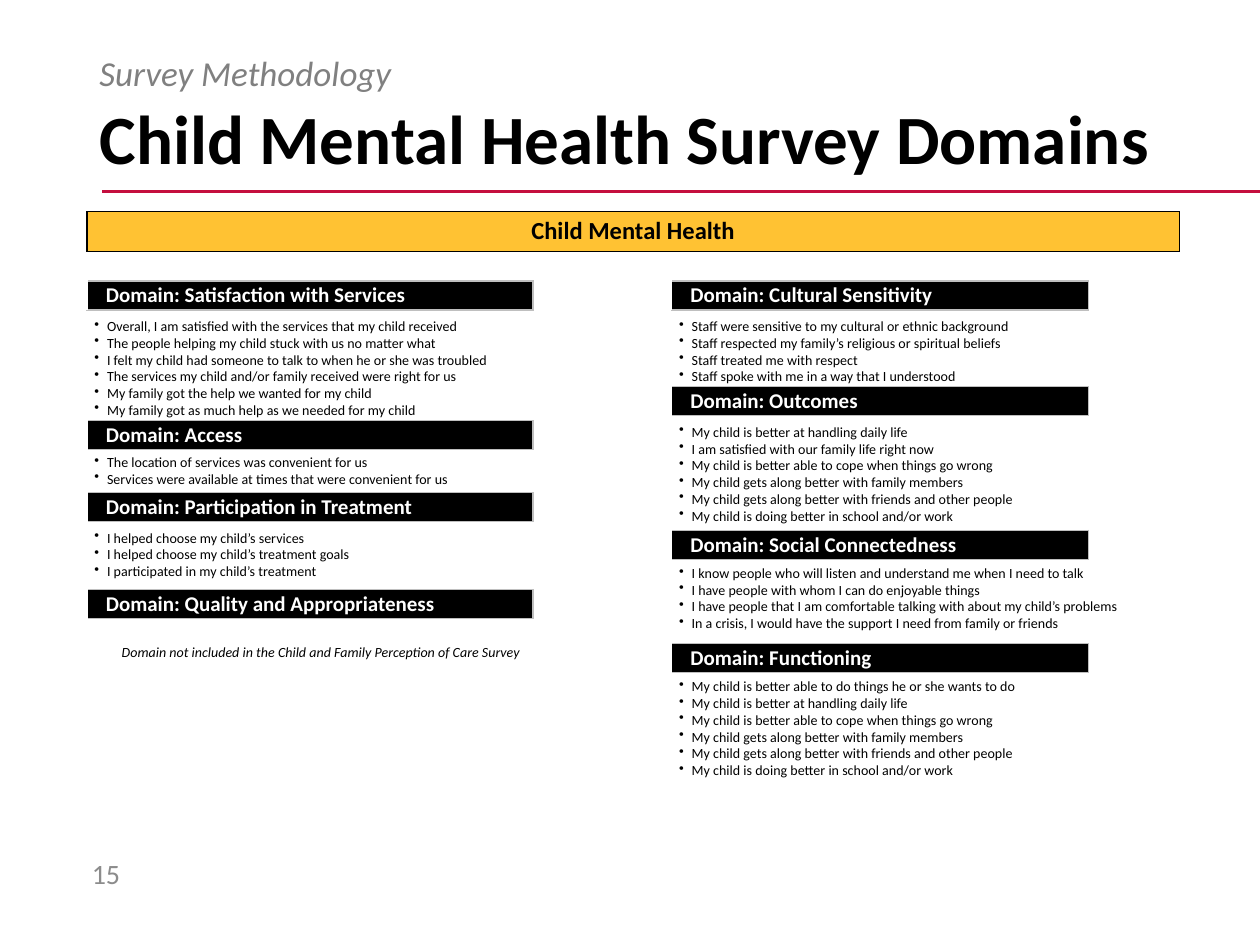
"""Build the slide listing the child mental health survey domains."""
from lxml import etree
from pptx import Presentation
from pptx.dml.color import RGBColor
from pptx.enum.shapes import MSO_CONNECTOR
from pptx.enum.text import MSO_ANCHOR, PP_ALIGN
from pptx.oxml.ns import qn
from pptx.util import Inches, Pt

LEFT, CENTER = PP_ALIGN.LEFT, PP_ALIGN.CENTER
TOP, MIDDLE = MSO_ANCHOR.TOP, MSO_ANCHOR.MIDDLE
STRAIGHT = MSO_CONNECTOR.STRAIGHT

BLACK = RGBColor(0x00, 0x00, 0x00)
WHITE = RGBColor(0xFF, 0xFF, 0xFF)
CRIMSON = RGBColor(0xC4, 0x0E, 0x3E)
AMBER = RGBColor(0xFF, 0xC2, 0x33)
SILVER = RGBColor(0xBF, 0xBF, 0xBF)
GRAY = RGBColor(0x80, 0x80, 0x80)
PAGE_GRAY = RGBColor(0x8C, 0x8C, 0x8C)

SLIDE_WIDTH, SLIDE_HEIGHT = Inches(10), Inches(7.5)
COLUMN = SLIDE_WIDTH // 1000
ROW = SLIDE_HEIGHT // 750
LEFT_EDGE, RIGHT_EDGE = 69, 533
BAR_HEIGHT = 23
LINE_HEIGHT, LIST_PADDING = 13, 6

DOMAIN_COLUMNS = [
    (LEFT_EDGE, 354, 424, [
        ("Satisfaction with Services", 223, 249, [
            "Overall, I am satisfied with the services that my child received",
            "The people helping my child stuck with us no matter what",
            "I felt my child had someone to talk to when he or she was troubled",
            "The services my child and/or family received were right for us",
            "My family got the help we wanted for my child",
            "My family got as much help as we needed for my child",
        ]),
        ("Access", 334, 357, [
            "The location of services was convenient for us",
            "Services were available at times that were convenient for us",
        ]),
        ("Participation in Treatment", 391, 417, [
            "I helped choose my child’s services",
            "I helped choose my child’s treatment goals",
            "I participated in my child’s treatment",
        ]),
        ("Quality and Appropriateness", 468, 508, []),
    ]),
    (RIGHT_EDGE, 331, 397, [
        ("Cultural Sensitivity", 223, 249, [
            "Staff were sensitive to my cultural or ethnic background",
            "Staff respected my family’s religious or spiritual beliefs",
            "Staff treated me with respect",
            "Staff spoke with me in a way that I understood",
        ]),
        ("Outcomes", 307, 333, [
            "My child is better at handling daily life",
            "I am satisfied with our family life right now",
            "My child is better able to cope when things go wrong",
            "My child gets along better with family members",
            "My child gets along better with friends and other people",
            "My child is doing better in school and/or work",
        ]),
        ("Social Connectedness", 421, 445, [
            "I know people who will listen and understand me when I need to talk",
            "I have people with whom I can do enjoyable things",
            "I have people that I am comfortable talking with about my child’s problems",
            "In a crisis, I would have the support I need from family or friends",
        ]),
        ("Functioning", 511, 535, [
            "My child is better able to do things he or she wants to do",
            "My child is better at handling daily life",
            "My child is better able to cope when things go wrong",
            "My child gets along better with family members",
            "My child gets along better with friends and other people",
            "My child is doing better in school and/or work",
        ]),
    ]),
]


def write_text(text_frame, text, size, color, bold=False, italic=False, alignment=LEFT, bullet=False):
    text_frame.text = text
    text_frame.word_wrap = True
    for paragraph in text_frame.paragraphs:
        paragraph.alignment = alignment
        if bullet:
            properties = paragraph._p.get_or_add_pPr()
            properties.set("marL", str(Inches(0.1)))
            properties.set("indent", str(-Inches(0.1)))
            etree.SubElement(properties, qn("a:buChar")).set("char", "•")
        for run in paragraph.runs:
            run.font.name = "Calibri"
            run.font.size = Pt(size)
            run.font.bold = bold
            run.font.italic = italic
            run.font.color.rgb = color


def add_bar(left, top, width, height, fill, border, sides):
    frame = slide.shapes.add_table(1, 1, left * COLUMN, top * ROW, width * COLUMN, height * ROW)
    frame.table.first_row = False
    frame.table.horz_banding = False
    cell = frame.table.cell(0, 0)
    properties = cell._tc.get_or_add_tcPr()
    for side in sides:
        line = etree.SubElement(properties, qn(f"a:ln{side}"), w=str(Pt(0.75)))
        solid = etree.SubElement(line, qn("a:solidFill"))
        etree.SubElement(solid, qn("a:srgbClr"), val=str(border))
    cell.fill.solid()
    cell.fill.fore_color.rgb = fill
    return cell


presentation = Presentation()
presentation.slide_width, presentation.slide_height = SLIDE_WIDTH, SLIDE_HEIGHT
slide = presentation.slides.add_slide(presentation.slide_layouts[5])

rule = slide.shapes.add_connector(STRAIGHT, 81 * COLUMN, 152 * ROW, SLIDE_WIDTH, 152 * ROW)
rule.line.color.rgb = CRIMSON
rule.line.width = Pt(2.25)
etree.SubElement(rule._element.spPr, qn("a:effectLst"))

title = slide.shapes.title
title.left, title.top = LEFT_EDGE * COLUMN, 40 * ROW
title.width, title.height = 862 * COLUMN, 145 * ROW
title.text_frame.vertical_anchor = MIDDLE
write_text(title.text_frame, "Child Mental Health Survey Domains", 39.5, BLACK, bold=True)
title.text_frame.paragraphs[0].line_spacing = 0.9

page_number = slide.shapes.add_textbox(63 * COLUMN, 673 * ROW, 55 * COLUMN, 40 * ROW)
page_number.text_frame.vertical_anchor = MIDDLE
write_text(page_number.text_frame, "15", 16, PAGE_GRAY)

section = slide.shapes.add_textbox(LEFT_EDGE * COLUMN, 40 * ROW, 862 * COLUMN, 49 * ROW)
write_text(section.text_frame, "Survey Methodology", 20, GRAY, italic=True)
section.text_frame.paragraphs[0].line_spacing = 0.9

banner = add_bar(LEFT_EDGE, 168, 867, 31, AMBER, BLACK, "LRTB")
banner.margin_top = banner.margin_bottom = Inches(0.04)
write_text(banner.text_frame, "Child Mental Health", 14, BLACK, bold=True, alignment=CENTER)

for left, bar_width, list_width, domains in DOMAIN_COLUMNS:
    for name, bar_top, list_top, statements in domains:
        bar = add_bar(left, bar_top, bar_width, BAR_HEIGHT, BLACK, SILVER, "RTB")
        bar.margin_left = Inches(0.15)
        bar.margin_right = bar.margin_top = bar.margin_bottom = 0
        bar.vertical_anchor = MIDDLE
        write_text(bar.text_frame, f"Domain: {name}", 12, WHITE, bold=True)

        list_left = left if statements else 43
        list_height = LINE_HEIGHT * max(len(statements), 1) + LIST_PADDING
        box = slide.shapes.add_textbox(list_left * COLUMN, list_top * ROW, list_width * COLUMN, list_height * ROW)
        text_frame = box.text_frame
        text_frame.vertical_anchor = TOP
        text_frame.margin_left = text_frame.margin_right = Inches(0.06)
        text_frame.margin_top = text_frame.margin_bottom = Inches(0.03)
        if statements:
            write_text(text_frame, "\n".join(statements), 8, BLACK, bullet=True)
        else:
            note = "Domain not included in the Child and Family Perception of Care Survey"
            write_text(text_frame, note, 8, BLACK, italic=True, alignment=CENTER)

presentation.save("out.pptx")
